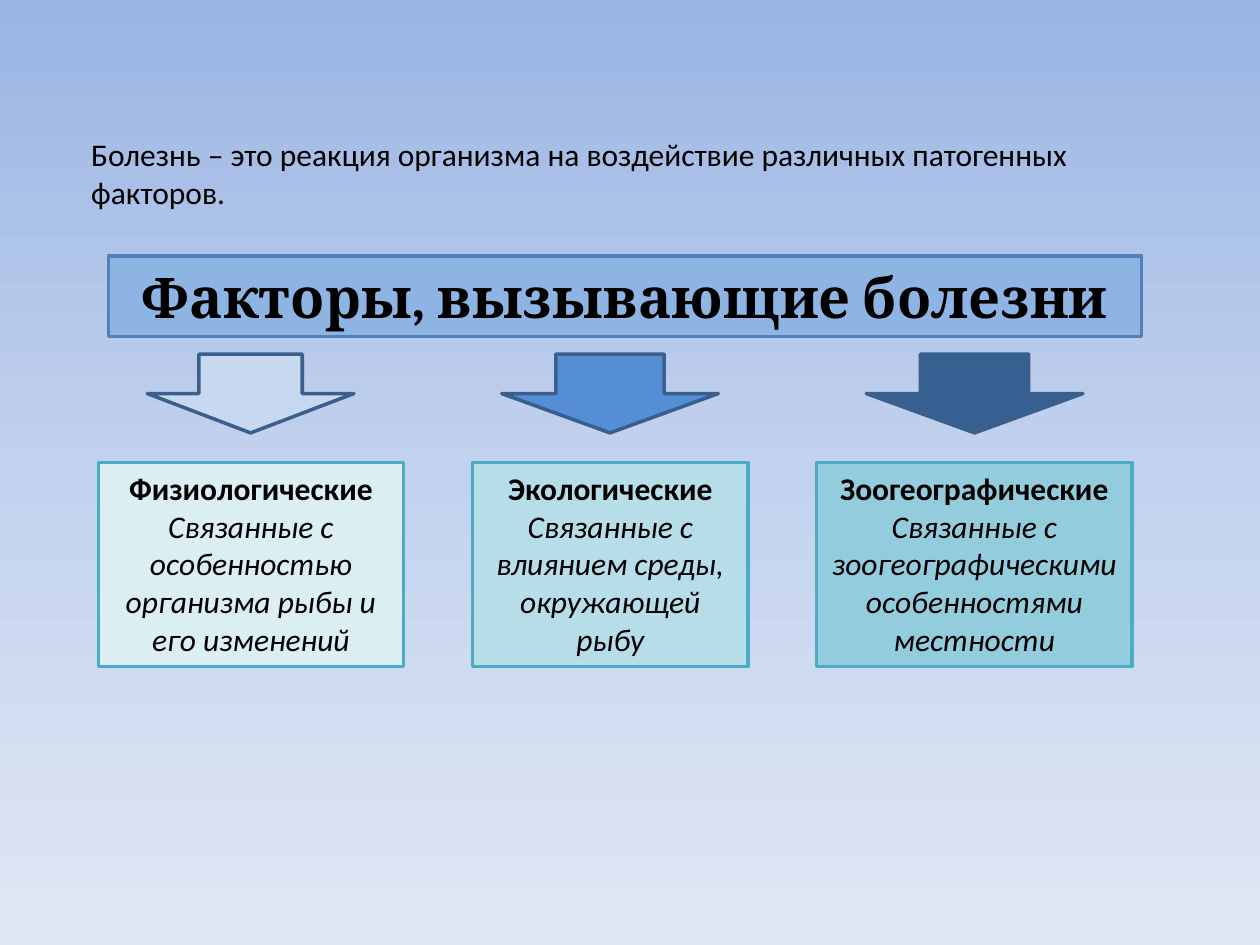
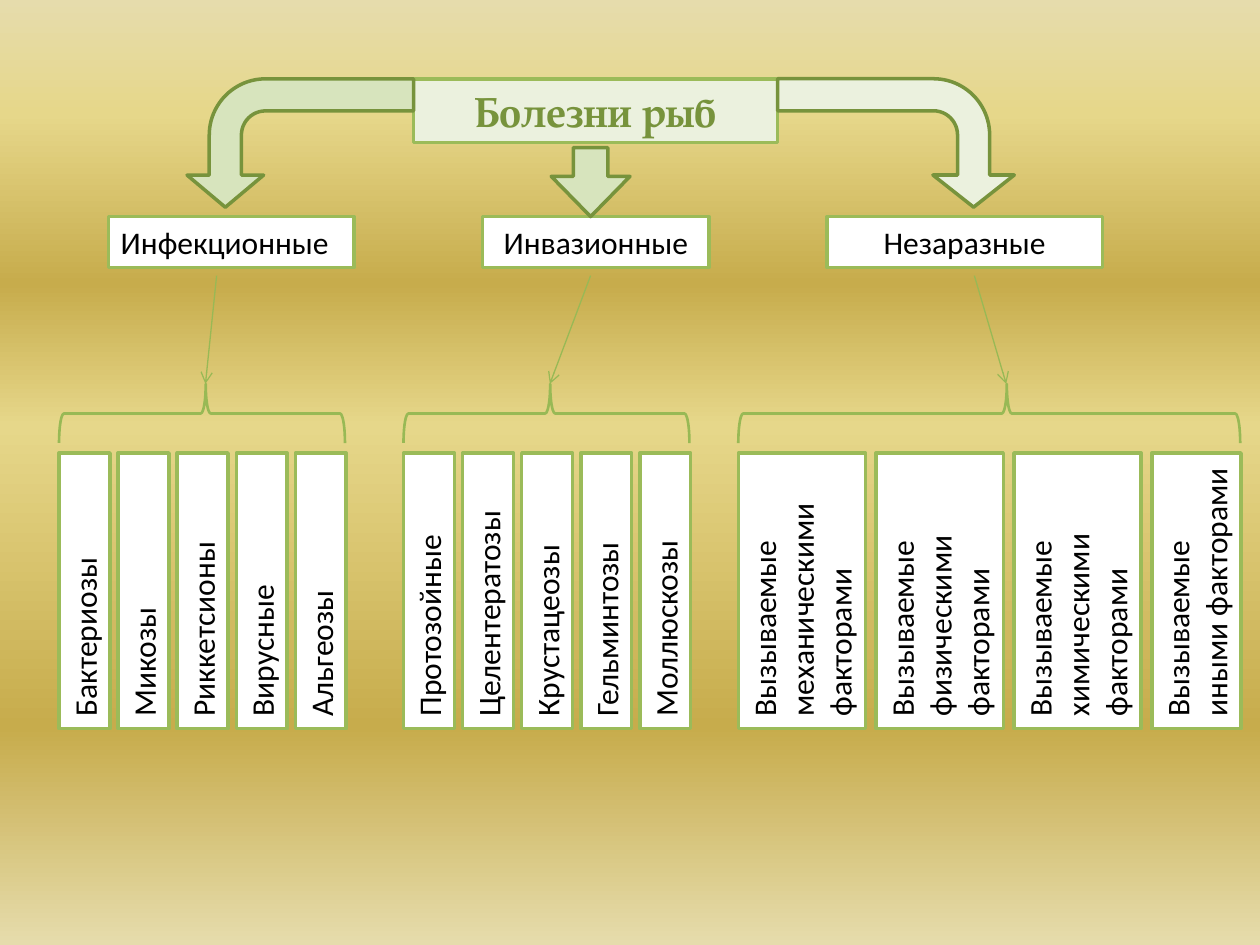
from lxml.etree import SubElement
from pptx import Presentation
from pptx.dml.color import RGBColor
from pptx.enum.shapes import MSO_CONNECTOR, MSO_SHAPE
from pptx.enum.text import MSO_ANCHOR, MSO_AUTO_SIZE, PP_ALIGN
from pptx.oxml.ns import qn
from pptx.util import Pt

COLORS = {
    "black": "000000", "white": "FFFFFF",
    "heading_blue": "8EB4E3", "heading_edge": "4F81BD",
    "pale_blue": "C6D9F1", "mid_blue": "558ED5", "deep_blue": "376092", "arrow_edge": "3A5F8C",
    "pale_teal": "DBEEF4", "light_teal": "B7DEE8", "mid_teal": "93CDDD", "teal_edge": "4BACC6",
    "pale_green": "EBF1DE", "light_green": "D7E4BD", "green_edge": "9BBB59",
    "dark_green": "77933C", "brace_green": "98B955",
}
BLUE_SKY = [(0, "9AB5E4"), (50, "C2D1ED"), (100, "E1E8F5")]
GOLD = [(0, "E6DCAC"), (12, "E6D78A"), (30, "C7AC4C"),
        (45, "E6D78A"), (77, "C7AC4C"), (100, "E6DCAC")]


def place(slide, kind, left, top, width, height, fill=None, line="green_edge",
          weight=2, rotation=0, adjustments=()):
    """Put a shape into the area it covers on the slide; kind None takes the title."""
    if rotation:
        left, top = left + (width - height) / 2, top + (height - width) / 2
        width, height = height, width
    area = [Pt(round(length, 2)) for length in (left, top, width, height)]
    if kind is None:
        shape = slide.shapes.title
        shape.left, shape.top, shape.width, shape.height = area
    else:
        shape = slide.shapes.add_shape(kind, *area)
        shape.shadow.inherit = False
        shape.rotation = rotation
        for index, value in enumerate(adjustments):
            shape.adjustments[index] = value
    if fill:
        shape.fill.solid()
        shape.fill.fore_color.rgb = RGBColor.from_string(COLORS[fill])
    else:
        shape.fill.background()
    shape.line.color.rgb = RGBColor.from_string(COLORS[line])
    shape.line.width = Pt(weight)
    return shape


def write(shape, text, size=18, font="Calibri", color="black", bold=False,
          italic=False, align=PP_ALIGN.LEFT):
    """Add a paragraph, using the empty first one if there is one."""
    frame = shape.text_frame
    frame.word_wrap = True
    frame.auto_size = MSO_AUTO_SIZE.NONE
    frame.vertical_anchor = MSO_ANCHOR.TOP
    paragraph = frame.add_paragraph() if frame.text else frame.paragraphs[0]
    paragraph.alignment = align
    run = paragraph.add_run()
    run.text = text
    run.font.size, run.font.name = Pt(size), font
    run.font.bold, run.font.italic = bold, italic
    run.font.color.rgb = RGBColor.from_string(COLORS[color])


presentation = Presentation()
presentation.slide_width, presentation.slide_height = Pt(720), Pt(540)
title_only = presentation.slide_layouts[5]
factors, diseases = [presentation.slides.add_slide(title_only) for _ in range(2)]

for slide, stops in ((factors, BLUE_SKY), (diseases, GOLD)):
    background = slide.background.fill
    background.gradient()
    background.gradient_angle = 270
    stop_list = slide.element.find(".//" + qn("a:gsLst"))
    for stop in list(stop_list):
        stop_list.remove(stop)
    for percent, color in stops:
        stop = SubElement(stop_list, qn("a:gs"), pos=str(percent * 1000))
        SubElement(stop, qn("a:srgbClr"), val=color)

# Slide 1: factors that cause disease
definition = factors.shapes.add_textbox(Pt(45), Pt(73.5), Pt(636), Pt(51))
write(definition, "Болезнь – это реакция организма на воздействие различных патогенных факторов.")

heading = place(factors, None, 61.9, 146.2, 590.4, 46, "heading_blue", "heading_edge")
write(heading, "Факторы, вызывающие болезни", size=32, font="Cambria", bold=True,
      align=PP_ALIGN.CENTER)

factor_groups = [
    ("Физиологические", "Связанные с особенностью организма рыбы и его изменений",
     56.2, 174.4, "pale_teal", 84.2, 118.1, "pale_blue"),
    ("Экологические", "Связанные с влиянием среды, окружающей рыбу",
     270, 157.6, "light_teal", 286.7, 123.8, "mid_blue"),
    ("Зоогеографические", "Связанные с зоогеографическими особенностями местности",
     466.6, 180.4, "mid_teal", 495, 123.8, "deep_blue"),
]
for name, cause, left, width, fill, arrow_left, arrow_width, arrow_fill in factor_groups:
    card = place(factors, MSO_SHAPE.RECTANGLE, left, 264.3, width, 116.6, fill, "teal_edge")
    write(card, name, bold=True, align=PP_ALIGN.CENTER)
    write(card, cause, italic=True, align=PP_ALIGN.CENTER)
    place(factors, MSO_SHAPE.DOWN_ARROW, arrow_left, 202.4, arrow_width, 45,
          arrow_fill, "arrow_edge")

# Slide 2: classes of fish diseases
heading = place(diseases, None, 236.2, 45, 208.1, 36.4, "pale_green")
write(heading, "Болезни рыб", size=24, font="TeX Gyre Pagella", color="dark_green",
      bold=True, align=PP_ALIGN.CENTER)

# Class: name, left, width, alignment; brace left, width, tip; label width; arrow from, to; kinds
disease_classes = [
    ("Инфекционные", 61.9, 140.4, PP_ALIGN.LEFT, 33.75, 163.4, 0.513, 29.1, 123.8, 117.4,
     ["Бактериозы", "Микозы", "Риккетсионы", "Вирусные", "Альгеозы"]),
    ("Инвазионные", 275.8, 129.4, PP_ALIGN.CENTER, 230.6, 163.4, 0.513, 29.1, 337.5, 314.2,
     ["Протозойные", "Целентератозы", "Крустацеозы", "Гельминтозы", "Моллюскозы"]),
    ("Незаразные", 472.5, 157.5, PP_ALIGN.CENTER, 421.9, 286.8, 0.535, 72.7, 556.8, 575,
     [f"Вызываемые {factor} факторами"
      for factor in ("механическими", "физическими", "химическими", "иными")]),
]
LABEL_TOP, LABEL_HEIGHT = 258.8, 157.6
for (name, left, width, align, brace_left, brace_width, tip, label_width,
     arrow_start, arrow_end, kinds) in disease_classes:
    card = place(diseases, MSO_SHAPE.RECTANGLE, left, 123.8, width, 29.1, "white")
    write(card, name, align=align)

    step = 33.75 if label_width < 30 else 78.75
    for index, kind in enumerate(kinds):
        narrowed = 51 if "иными" in kind.split() else label_width
        label = place(diseases, MSO_SHAPE.RECTANGLE, brace_left + index * step, LABEL_TOP,
                      narrowed, LABEL_HEIGHT, "white", rotation=270)
        write(label, kind)

    place(diseases, MSO_SHAPE.RIGHT_BRACE, brace_left, 219.4, brace_width, 33.75,
          line="brace_green", weight=1.5, rotation=270, adjustments=(0.083, tip))

    arrow = diseases.shapes.add_connector(
        MSO_CONNECTOR.STRAIGHT, Pt(arrow_start), Pt(157.5), Pt(arrow_end), Pt(219.4))
    arrow.line.color.rgb = RGBColor.from_string(COLORS["brace_green"])
    arrow.line.width = Pt(0.75)
    SubElement(arrow.line._get_or_add_ln(), qn("a:tailEnd"), type="arrow")
    SubElement(arrow.element.spPr, qn("a:effectLst"))

place(diseases, MSO_SHAPE.BENT_ARROW, 444.4, 45, 135.2, 73.4, "pale_green", "dark_green",
      rotation=90, adjustments=(0.25, 0.317, 0.25, 0.438))
left_branch = place(diseases, MSO_SHAPE.BENT_ARROW, 106.9, 45, 129.4, 73.4, "light_green",
                    "dark_green", rotation=90, adjustments=(0.25, 0.298, 0.25, 0.438))
left_branch.element.spPr.xfrm.set("flipV", "1")
place(diseases, MSO_SHAPE.DOWN_ARROW, 315, 84.4, 45, 39.4, "light_green", "dark_green",
      adjustments=(0.438, 0.583))

presentation.save("out.pptx")
